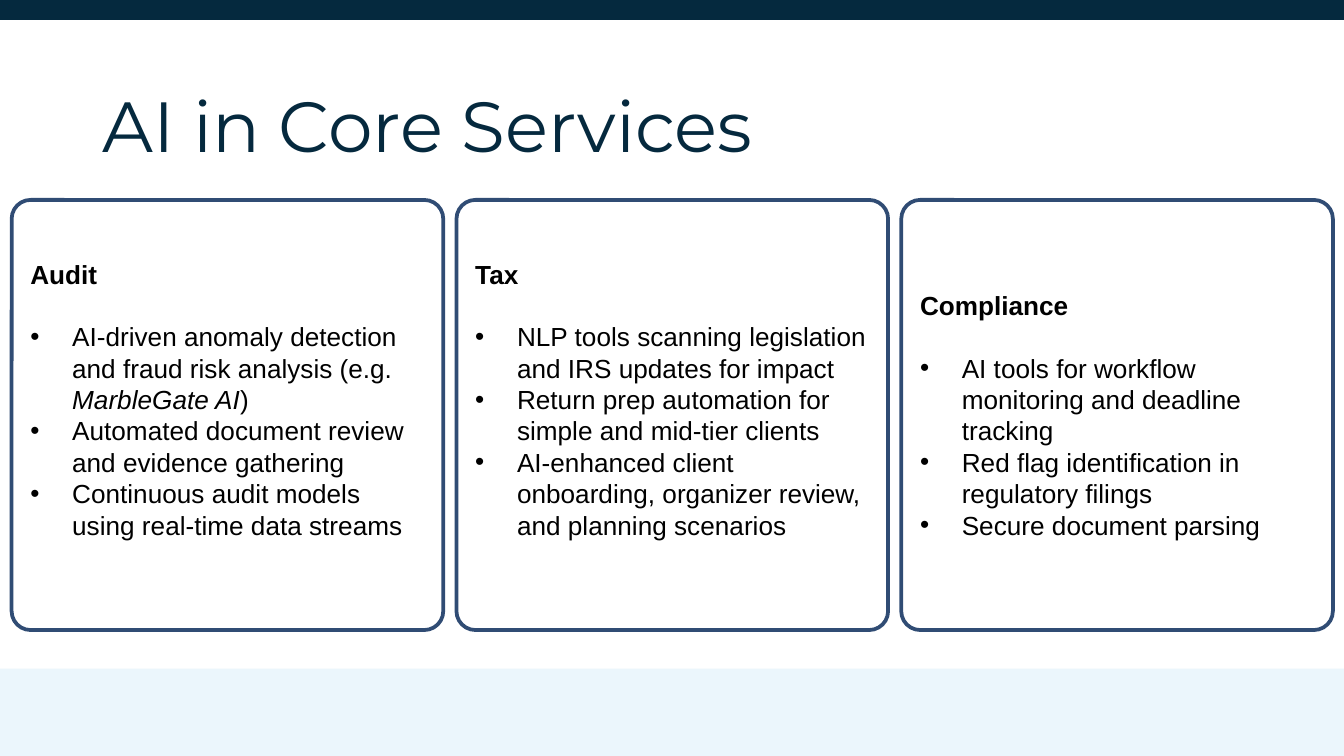
import pptx
import pptx.util
import pptx.dml.color
import pptx.enum.shapes
import pptx.enum.text
import pptx.oxml.ns
from lxml import etree

Cm, Pt = pptx.util.Cm, pptx.util.Pt
RGBColor = pptx.dml.color.RGBColor
SHAPE = pptx.enum.shapes.MSO_SHAPE
ALIGN = pptx.enum.text.PP_ALIGN
ANCHOR = pptx.enum.text.MSO_ANCHOR

NAVY = RGBColor(0x05, 0x29, 0x3E)
PALE = RGBColor(0xEB, 0xF6, 0xFC)
BORDER = RGBColor(0x30, 0x4C, 0x74)
WHITE = RGBColor(0xFF, 0xFF, 0xFF)
BLACK = RGBColor(0x00, 0x00, 0x00)

WIDTH, HEIGHT = Cm(25.4), Cm(14.29)
LINE_HEIGHT = Pt(16.8)
BODY = {"name": "Arial", "size": Pt(14), "bold": False, "italic": False}
HEADING = {**BODY, "bold": True}

# Each bullet is a list of (text, italic) spans; the last value is the space
# kept free below the text.
CARDS = [
    ("Audit", [
        [("AI-driven anomaly detection and fraud risk analysis (e.g. ", False),
         ("MarbleGate AI", True), (")", False)],
        [("Automated document review and evidence gathering", False)],
        [("Continuous audit models using real-time data streams", False)],
    ], LINE_HEIGHT),
    ("Tax", [
        [("NLP tools scanning legislation and IRS updates for impact", False)],
        [("Return prep automation for simple and mid-tier clients", False)],
        [("AI-enhanced client onboarding, organizer review, and planning scenarios", False)],
    ], LINE_HEIGHT),
    ("Compliance", [
        [("AI tools for workflow monitoring and deadline tracking", False)],
        [("Red flag identification in regulatory filings", False)],
        [("Secure document parsing", False)],
    ], 0),
]


def set_values(target, values):
    for name, value in values.items():
        setattr(target, name, value)


def add_span(para, text, values, color):
    span = para.add_run()
    span.text = text
    set_values(span.font, values)
    span.font.color.rgb = color


def add_bullet(para):
    properties = para._p.get_or_add_pPr()
    indent = Cm(0.79)
    properties.set("marL", str(indent))
    properties.set("indent", str(-indent))
    qn = pptx.oxml.ns.qn
    color = etree.SubElement(properties, qn("a:buClr"))
    etree.SubElement(color, qn("a:srgbClr"), val=str(BLACK))
    etree.SubElement(properties, qn("a:buFont"), typeface="Arial")
    etree.SubElement(properties, qn("a:buChar"), char="•")


def add_band(page, box, color):
    band = page.shapes.add_shape(SHAPE.RECTANGLE, *box)
    band.shadow.inherit = False
    band.fill.solid()
    band.fill.fore_color.rgb = color
    band.line.fill.background()


def place_title(page, box, text):
    title = page.shapes.title
    set_values(title, dict(zip(("left", "top", "width", "height"), box)))
    frame = title.text_frame
    set_values(frame, {
        "margin_left": Cm(0.18), "margin_right": Cm(0.18),
        "margin_top": Cm(0.1), "margin_bottom": Cm(0.1),
        "word_wrap": True, "vertical_anchor": ANCHOR.TOP,
        "auto_size": pptx.enum.text.MSO_AUTO_SIZE.NONE,
    })
    para = frame.paragraphs[0]
    set_values(para, {"alignment": ALIGN.LEFT, "line_spacing": 0.9})
    add_span(para, text, {"name": "Montserrat", "size": Pt(38)}, NAVY)


def add_card(page, box, heading, bullets, space_below):
    card = page.shapes.add_shape(SHAPE.ROUNDED_RECTANGLE, *box)
    card.adjustments[0] = 0.044
    card.shadow.inherit = False
    card.fill.solid()
    card.fill.fore_color.rgb = WHITE
    card.line.color.rgb = BORDER
    card.line.width = Pt(2)

    frame = card.text_frame
    set_values(frame, {
        "word_wrap": True, "vertical_anchor": ANCHOR.MIDDLE,
        "margin_bottom": Cm(0.13) + space_below,
    })
    layout = {"alignment": ALIGN.LEFT, "line_spacing": LINE_HEIGHT}
    para = frame.paragraphs[0]
    set_values(para, {**layout, "space_after": LINE_HEIGHT})
    add_span(para, heading, HEADING, BLACK)
    for spans in bullets:
        para = frame.add_paragraph()
        set_values(para, layout)
        add_bullet(para)
        for text, italic in spans:
            add_span(para, text, {**BODY, "italic": italic}, BLACK)


def add_card_row(page, box, cards, gap):
    left, top, width, height = box
    card_width = (width - gap * (len(cards) - 1)) // len(cards)
    for index, card in enumerate(cards):
        card_left = left + index * (card_width + gap)
        add_card(page, (card_left, top, card_width, height), *card)


def main():
    deck = pptx.Presentation()
    set_values(deck, {"slide_width": WIDTH, "slide_height": HEIGHT})
    page = deck.slides.add_slide(deck.slide_layouts[5])

    # Bands along the bottom and top edges
    footer_height = Cm(1.65)
    add_band(page, (0, HEIGHT - footer_height, WIDTH, footer_height), PALE)
    add_band(page, (0, 0, WIDTH, Cm(0.38)), NAVY)

    # Title and the three service cards
    place_title(page, (Cm(1.75), Cm(1.63), Cm(21.9), Cm(1.47)), "AI in Core Services")
    add_card_row(page, (Cm(0.22), Cm(3.78), Cm(24.97), Cm(8.13)), CARDS, Cm(0.25))

    deck.save("out.pptx")


if __name__ == "__main__":
    main()
